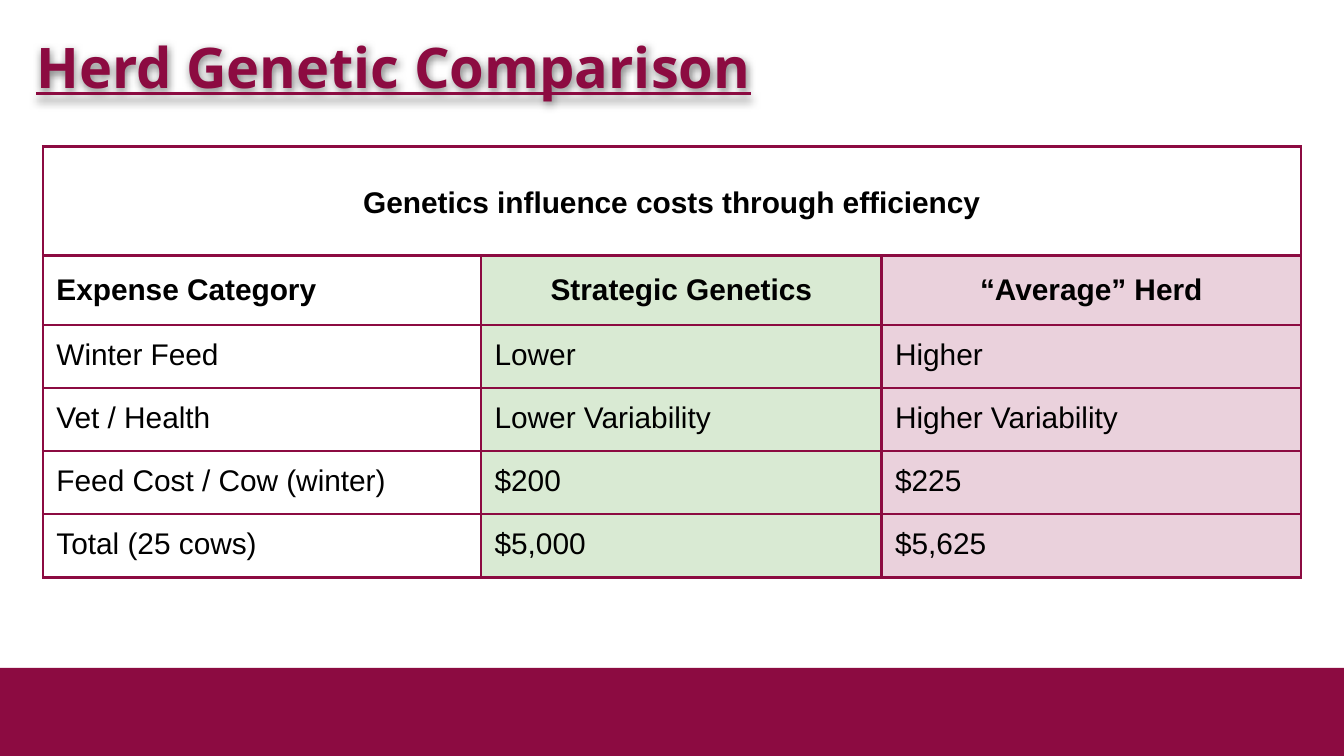
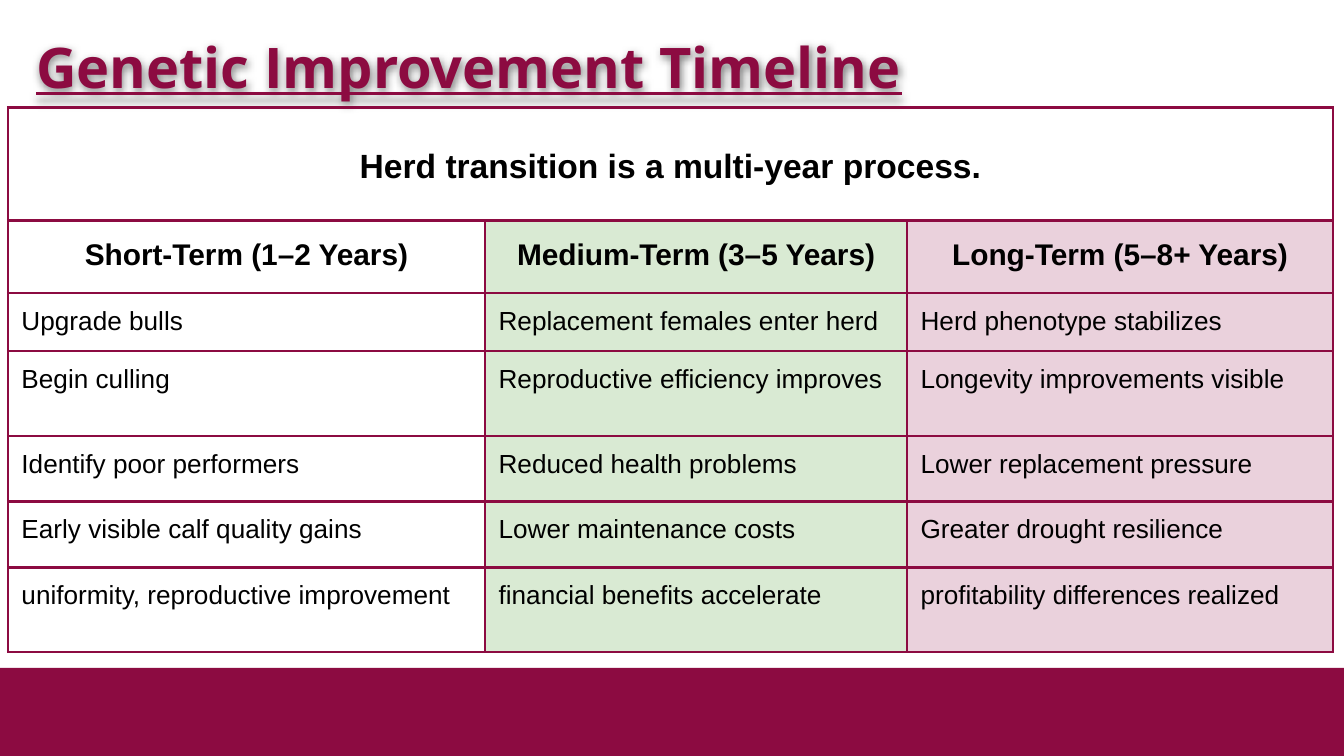
import pptx
import pptx.util
import pptx.dml.color
import pptx.enum.shapes
import pptx.enum.text
import pptx.oxml
import pptx.oxml.ns

Inches = pptx.util.Inches
Pt = pptx.util.Pt
ALIGN = pptx.enum.text.PP_ALIGN
ANCHOR = pptx.enum.text.MSO_ANCHOR
NS = pptx.oxml.ns.nsdecls("a")

COLORS = {
    "maroon": "8C0B41",
    "green": "D9EAD3",
    "pink": "EAD1DC",
    "black": "000000",
}
COLUMN_FILLS = [None, "green", "pink"]

# Slide content: sizes are for the banner, heading and body rows
SLIDES = [
    {
        "title": "Herd Genetic Comparison",
        "left": 0.32, "top": 1.09,
        "cols": [3.26, 2.98, 3.12],
        "heights": [0.81, 0.52, 0.46, 0.47, 0.47, 0.47],
        "sizes": [16, 16, 16],
        "heading_aligns": [ALIGN.LEFT, ALIGN.CENTER, ALIGN.CENTER],
        "rows": [
            ["Genetics influence costs through efficiency"],
            ["Expense Category", "Strategic Genetics", "“Average” Herd"],
            ["Winter Feed", "Lower", "Higher"],
            ["Vet / Health", "Lower Variability", "Higher Variability"],
            ["Feed Cost / Cow (winter)", "$200", "$225"],
            ["Total (25 cows)", "$5,000", "$5,625"],
        ],
    },
    {
        "title": "Genetic Improvement Timeline",
        "left": 0.06, "top": 0.8,
        "cols": [3.55, 3.14, 3.17],
        "heights": [0.84, 0.54, 0.42, 0.63, 0.49, 0.49, 0.63],
        "sizes": [18, 16, 14],
        "heading_aligns": [ALIGN.CENTER] * 3,
        "rows": [
            ["Herd transition is a multi-year process."],
            ["Short-Term (1–2 Years)", "Medium-Term (3–5 Years)", "Long-Term (5–8+ Years)"],
            ["Upgrade bulls", "Replacement females enter herd", "Herd phenotype stabilizes"],
            ["Begin culling", "Reproductive efficiency improves",
             "Longevity improvements visible"],
            ["Identify poor performers", "Reduced health problems", "Lower replacement pressure"],
            ["Early visible calf quality gains", "Lower maintenance costs",
             "Greater drought resilience"],
            ["uniformity, reproductive improvement", "financial benefits accelerate",
             "profitability differences realized"],
        ],
    },
]


def rgb(name):
    return pptx.dml.color.RGBColor.from_string(COLORS[name])


def write(tf, text, size, font="Arial", color="black", bold=False,
          underline=None, align=ALIGN.LEFT, spacing=None):
    p = tf.paragraphs[0]
    p.alignment = align
    p.line_spacing = spacing
    r = p.add_run()
    r.text = text
    r.font.name = font
    r.font.size = Pt(size)
    r.font.bold = bold
    r.font.underline = underline
    r.font.color.rgb = rgb(color)


# Widescreen 16:9 page
prs = pptx.Presentation()
prs.slide_width = Inches(10)
prs.slide_height = prs.slide_width * 9 // 16

for data in SLIDES:
    s = prs.slides.add_slide(prs.slide_layouts[6])

    # Footer band
    band_top = Inches(4.97)
    band = s.shapes.add_shape(pptx.enum.shapes.MSO_SHAPE.RECTANGLE,
                              0, band_top, prs.slide_width, prs.slide_height - band_top)
    band.shadow.inherit = False
    band.fill.solid()
    band.fill.fore_color.rgb = rgb("maroon")
    band.line.fill.background()

    # Title with a soft shadow below it
    sp = s.shapes.add_textbox(Inches(0.2), Inches(0.2), Inches(9.6), Inches(0.75))
    tf = sp.text_frame
    tf.word_wrap = True
    tf.margin_left = tf.margin_right = Inches(0.07)
    tf.margin_top = tf.margin_bottom = Inches(0.04)
    write(tf, data["title"], 30, font="Open Sans", color="maroon", bold=True, underline=True)
    sp.fill.background()
    sp._element.spPr.append(pptx.oxml.parse_xml(
        f'<a:effectLst {NS}><a:outerShdw blurRad="57150" dist="19050" dir="5400000" '
        'algn="bl" rotWithShape="0"><a:srgbClr val="000000"><a:alpha val="50000"/>'
        '</a:srgbClr></a:outerShdw></a:effectLst>'))

    # Table grid
    cols, heights, rows = data["cols"], data["heights"], data["rows"]
    frame = s.shapes.add_table(len(rows), len(cols), Inches(data["left"]), Inches(data["top"]),
                               Inches(sum(cols)), Inches(sum(heights)))
    table = frame.table
    table.first_row = table.horz_banding = False
    for column, width in zip(table.columns, cols):
        column.width = Inches(width)
    for row, height in zip(table.rows, heights):
        row.height = Inches(height)
    table.cell(0, 0).merge(table.cell(0, len(cols) - 1))

    # Cell borders, fills and text
    for i, texts in enumerate(rows):
        for j in range(len(cols)):
            cell = table.cell(i, j)
            cell.margin_left = cell.margin_right = Inches(0.1)
            cell.margin_top = cell.margin_bottom = Inches(0.1)
            cell.vertical_anchor = ANCHOR.TOP if i else ANCHOR.MIDDLE
            for side in ("lnL", "lnR", "lnT", "lnB"):
                cell._tc.get_or_add_tcPr().append(pptx.oxml.parse_xml(
                    f'<a:{side} {NS} w="{Pt(1.5)}"><a:solidFill>'
                    f'<a:srgbClr val="{COLORS["maroon"]}"/></a:solidFill></a:{side}>'))
            if i and COLUMN_FILLS[j]:
                cell.fill.solid()
                cell.fill.fore_color.rgb = rgb(COLUMN_FILLS[j])
            else:
                cell.fill.background()
            if j < len(texts):
                aligns = [ALIGN.CENTER, data["heading_aligns"][j], ALIGN.LEFT]
                level = min(i, 2)
                write(cell.text_frame, texts[j], data["sizes"][level], bold=level < 2,
                      align=aligns[level], spacing=1.15 if level < 2 else None)

prs.save("out.pptx")
